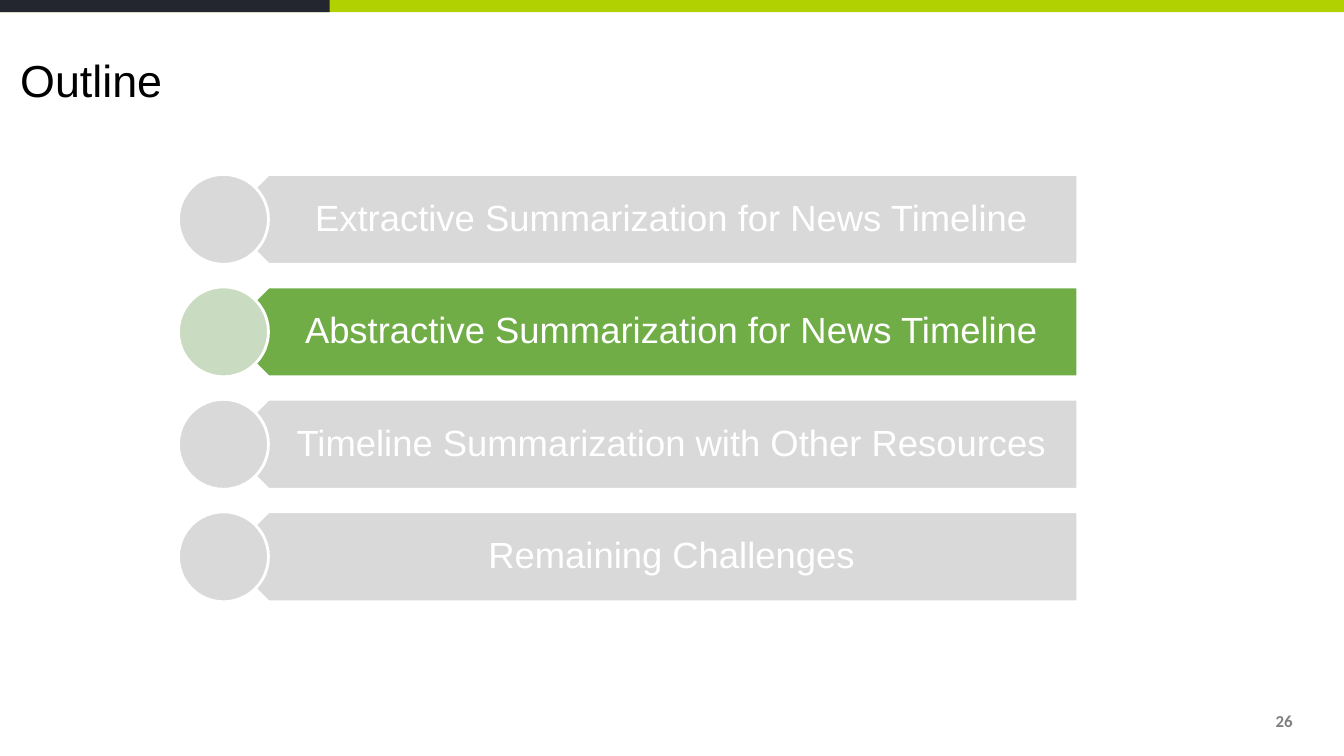
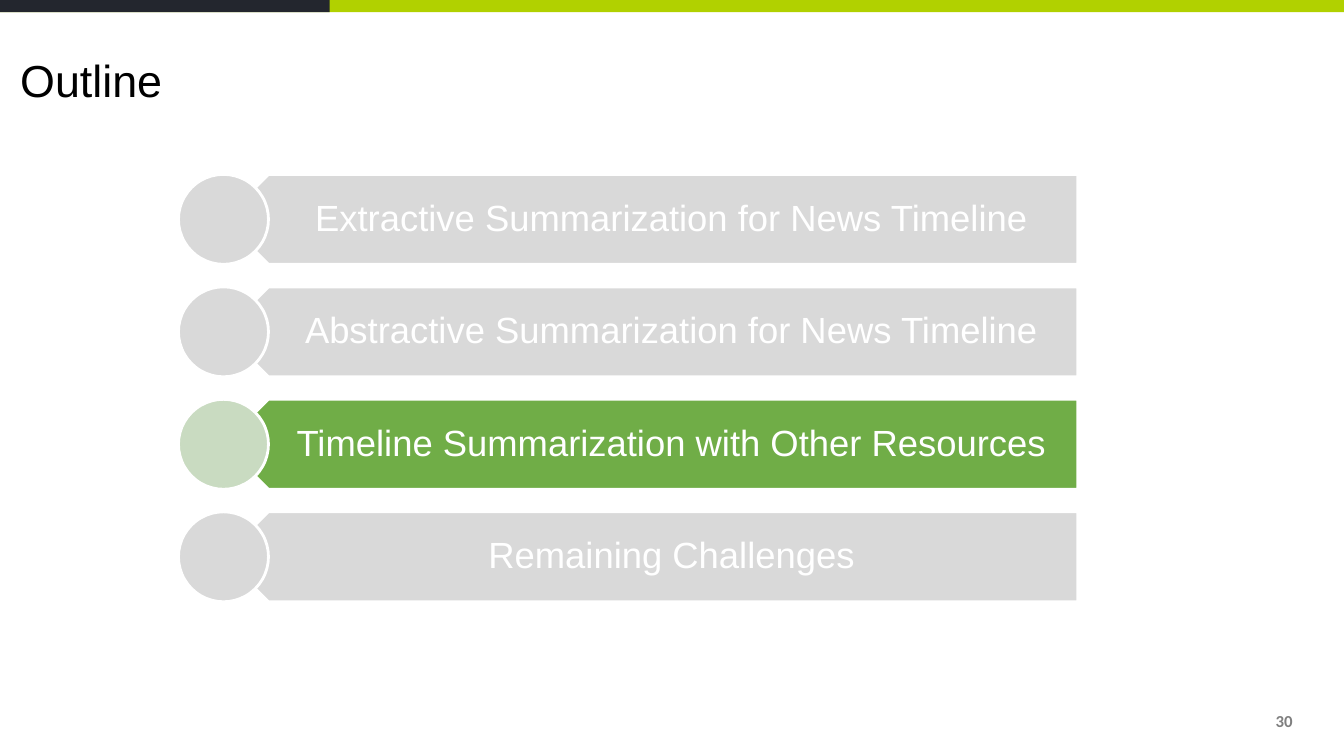
from pptx import Presentation
from pptx import util as u
from pptx.dml.color import RGBColor
from pptx.enum import shapes, text

WIDE, HIGH = 13.33, 7.5
FONT = "Arial"
WHITE, BLACK, GREY = "FFFFFF", "000000", "7F7F7F"
LIME, DARK = "B1D100", "23262E"
DIM = ("D9D9D9", "D9D9D9")
LIT = ("70AD47", "C9DBC1")
TOPICS = [
    "Extractive Summarization for News Timeline",
    "Abstractive Summarization for News Timeline",
    "Timeline Summarization with Other Resources",
    "Remaining Challenges",
]
PAGES = [(26, 1), (30, 2)]  # page number, index of the current topic


def paint(shape, fill, line=None):
    shape.shadow.inherit = False
    shape.fill.solid()
    shape.fill.fore_color.rgb = RGBColor.from_string(fill)
    if line:
        shape.line.color.rgb = RGBColor.from_string(line)
        shape.line.width = u.Pt(2)
    else:
        shape.line.fill.background()


def write(shape, words, size, color, align, font=FONT, bold=False,
          inset=(0.1, 0.05, 0.1, 0.05), space=None):
    frame = shape.text_frame
    frame.text = words
    frame.word_wrap = True
    frame.auto_size = text.MSO_AUTO_SIZE.NONE
    frame.vertical_anchor = text.MSO_ANCHOR.MIDDLE
    (frame.margin_left, frame.margin_top,
     frame.margin_right, frame.margin_bottom) = map(u.Inches, inset)
    para = frame.paragraphs[0]
    para.alignment = align
    para.line_spacing = space
    face = para.runs[0].font
    face.name, face.size, face.bold = font, u.Pt(size), bold
    face.color.rgb = RGBColor.from_string(color)


def add(slide, kind, box, fill, line=None):
    shape = slide.shapes.add_shape(kind, *map(u.Inches, box))
    paint(shape, fill, line)


def frame(slide, title, page):
    """Add the top bands, the title and the page number."""
    for width, fill in ((WIDE, LIME), (3.27, DARK)):
        add(slide, shapes.MSO_SHAPE.RECTANGLE, (0, 0, width, 0.12), fill)
    head = slide.shapes.title
    head.left, head.top, head.width, head.height = map(
        u.Inches, (0.1, 0.51, 12.51, 0.62))
    write(head, title, 32, BLACK, text.PP_ALIGN.LEFT, space=0.9)
    foot = slide.shapes.add_textbox(*map(u.Inches, (9.92, 6.95, 3, 0.4)))
    write(foot, str(page), 12, GREY, text.PP_ALIGN.RIGHT, "Calibri", True)


def topic(slide, box, words, look):
    """Add a left-pointing bar with a disc over its tip."""
    left, top, width, high = box
    half = high / 2
    right, base, neck = left + width, top + high, left + high
    points = [(right, base), (neck, base), (left + half, top + half),
              (neck, top), (right, top)]
    spots = [(u.Inches(x), u.Inches(y)) for x, y in points]
    path = slide.shapes.build_freeform(*spots[0])
    path.add_line_segments(spots[1:], close=True)
    bar = path.convert_to_shape()
    paint(bar, look[0], WHITE)
    write(bar, words, 26, WHITE, text.PP_ALIGN.CENTER,
          inset=(0.62, 0.11, 0.2, 0.11), space=0.9)
    add(slide, shapes.MSO_SHAPE.OVAL, (left, top, high, high), look[1], WHITE)


def agenda(slide, box, now):
    """Stack the topics in the box, with gaps a quarter of a bar high."""
    left, top, width, high = box
    bar = high / (len(TOPICS) * 1.25 - 0.25)
    for row, words in enumerate(TOPICS):
        place = (left, top + row * bar * 1.25, width, bar)
        topic(slide, place, words, LIT if row == now else DIM)


def main():
    deck = Presentation()
    deck.slide_width, deck.slide_height = u.Inches(WIDE), u.Inches(HIGH)
    for page, now in PAGES:
        slide = deck.slides.add_slide(deck.slide_layouts[5])
        frame(slide, "Outline", page)
        agenda(slide, (1.77, 1.73, 8.92, 4.24), now)
    deck.save("out.pptx")


if __name__ == "__main__":
    main()
